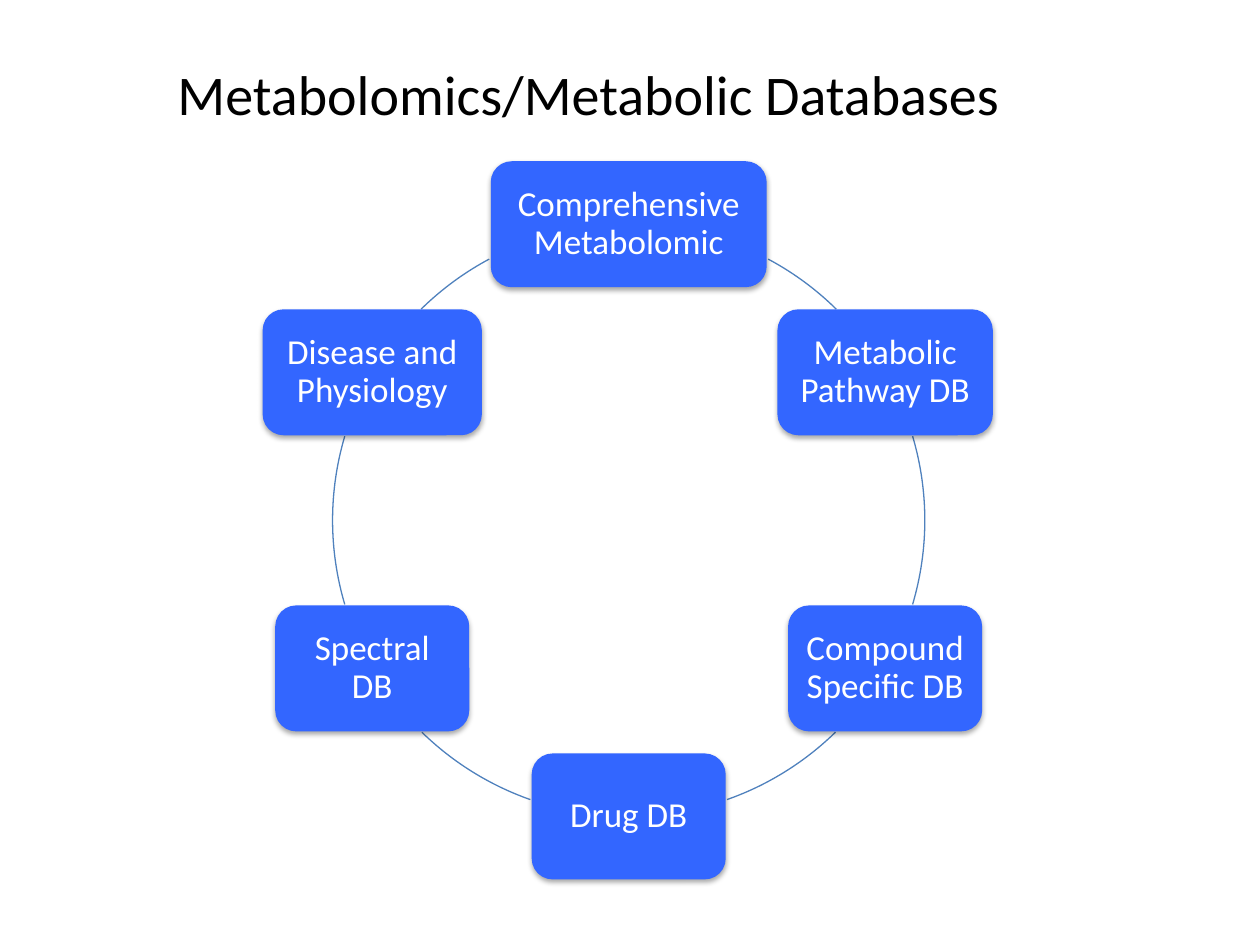
import math
from lxml import etree
from pptx import Presentation
from pptx.dml.color import RGBColor
from pptx.enum import shapes, text
from pptx.oxml import ns
from pptx.util import Inches, Pt

NODES = [
    ("Comprehensive Metabolomic", 2.19),
    ("Metabolic Pathway DB", 1.71),
    ("Compound Specific DB", 1.54),
    ("Drug DB", 1.54),
    ("Spectral DB", 1.54),
    ("Disease and Physiology", 1.74),
]
ARCS = [(298.1, 314.5), (343.5, 16.5), (45.7, 70.6),
        (109.4, 134.3), (163.5, 196.5), (225.5, 241.9)]


def color(code):
    """Return the colour for a hex string."""
    return RGBColor.from_string(code)


def write(par, words, size, code):
    """Add one run in the slide font."""
    run = par.add_run()
    run.text = words
    run.font.name = "Calibri"
    run.font.size = Pt(size)
    run.font.color.rgb = color(code)


def shade(shape):
    """Give a shape a soft shadow below it."""
    shape.shadow.inherit = False
    effects = shape.element.spPr.find(ns.qn("a:effectLst"))
    outer = etree.SubElement(effects, ns.qn("a:outerShdw"), blurRad=str(Pt(3.1)),
                             dist=str(Pt(1.8)), dir="5400000", rotWithShape="0")
    black = etree.SubElement(outer, ns.qn("a:srgbClr"), val="000000")
    etree.SubElement(black, ns.qn("a:alpha"), val="35000")


def title(slide, left, top, width, height):
    """Place the slide title."""
    box = slide.shapes.add_textbox(*map(Inches, (left, top, width, height)))
    box.text_frame.word_wrap = True
    write(box.text_frame.paragraphs[0], "Metabolomics/Metabolic Databases", 32, "000000")


def node(slide, words, left, top, width, height):
    """Place one labelled box of the cycle."""
    box = slide.shapes.add_shape(shapes.MSO_SHAPE.ROUNDED_RECTANGLE,
                                 *map(Inches, (left, top, width, height)))
    box.fill.solid()
    box.fill.fore_color.rgb = color("3366FF")
    box.line.fill.background()
    shade(box)
    frame = box.text_frame
    frame.word_wrap = True
    frame.vertical_anchor = text.MSO_ANCHOR.MIDDLE
    frame.margin_left = frame.margin_right = Inches(0.08)
    frame.margin_top = frame.margin_bottom = Inches(0.08)
    par = frame.paragraphs[0]
    par.alignment = text.PP_ALIGN.CENTER
    par.line_spacing = 0.9
    write(par, words, 20, "FFFFFF")


def arc(slide, left, top, size, start, end):
    """Draw part of the ring, clockwise between two angles in degrees."""
    curve = slide.shapes.add_shape(shapes.MSO_SHAPE.ARC,
                                   *map(Inches, (left, top, size, size)))
    curve.adjustments[0] = start * 0.6
    curve.adjustments[1] = end * 0.6
    curve.fill.background()
    curve.line.color.rgb = color("4F81BD")
    curve.line.width = Pt(0.75)
    curve.shadow.inherit = False


def cycle(slide, left, top, size):
    """Place the ring and space its boxes evenly from the top."""
    for start, end in ARCS:
        arc(slide, left, top, size, start, end)
    radius = size / 2
    high = 1
    for i, (words, width) in enumerate(NODES):
        angle = 2 * math.pi * i / len(NODES)
        x = left + radius + radius * math.sin(angle)
        y = top + radius - radius * math.cos(angle)
        node(slide, words, x - width / 2, y - high / 2, width, high)


def main():
    """Build and save the slide."""
    deck = Presentation()
    deck.slide_width, deck.slide_height = Inches(10), Inches(7.5)
    slide = deck.slides.add_slide(deck.slide_layouts[6])
    cycle(slide, 2.64, 1.78, 4.7)
    title(slide, 1.31, 0.42, 7.8, 0.64)
    deck.save("out.pptx")


if __name__ == "__main__":
    main()
